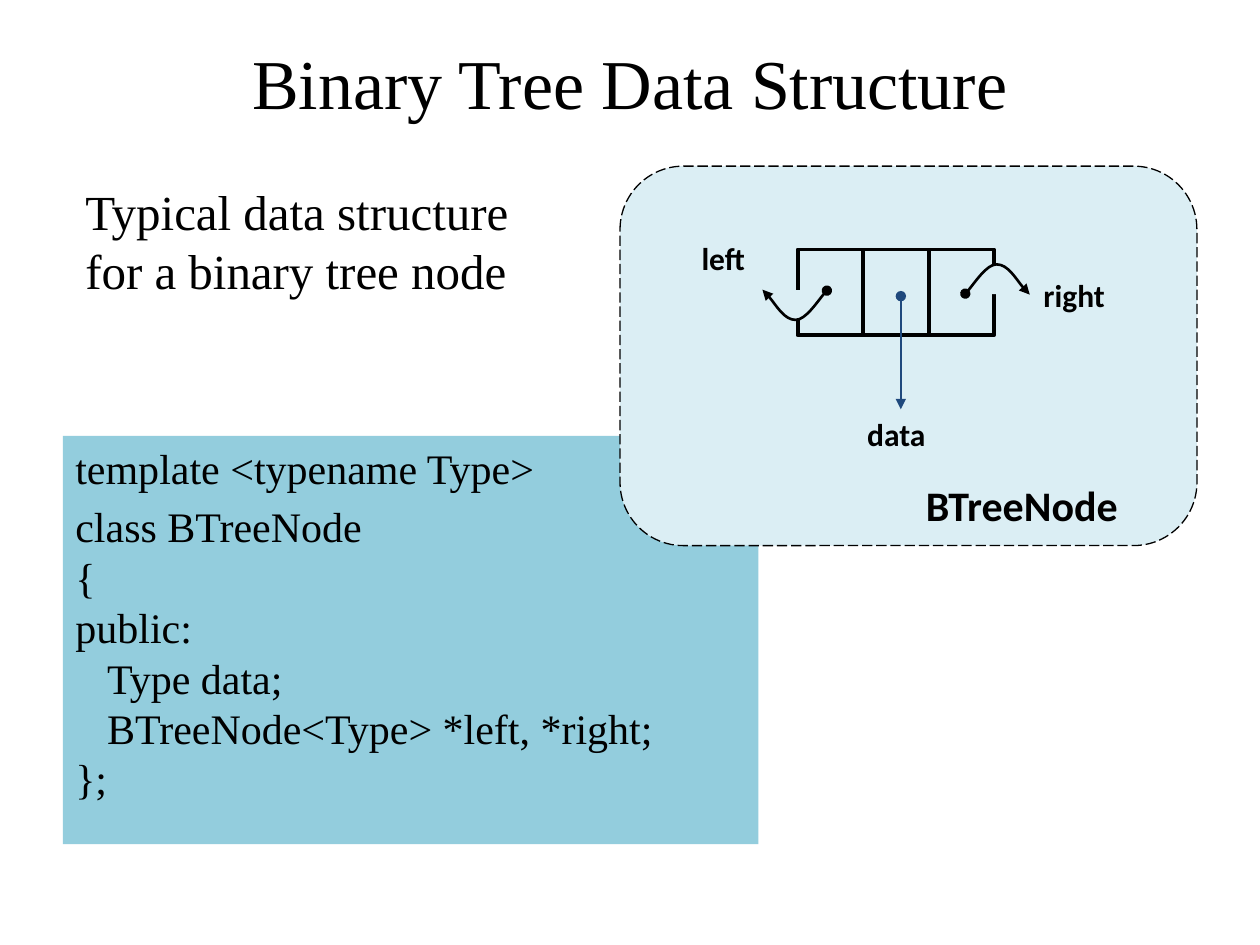
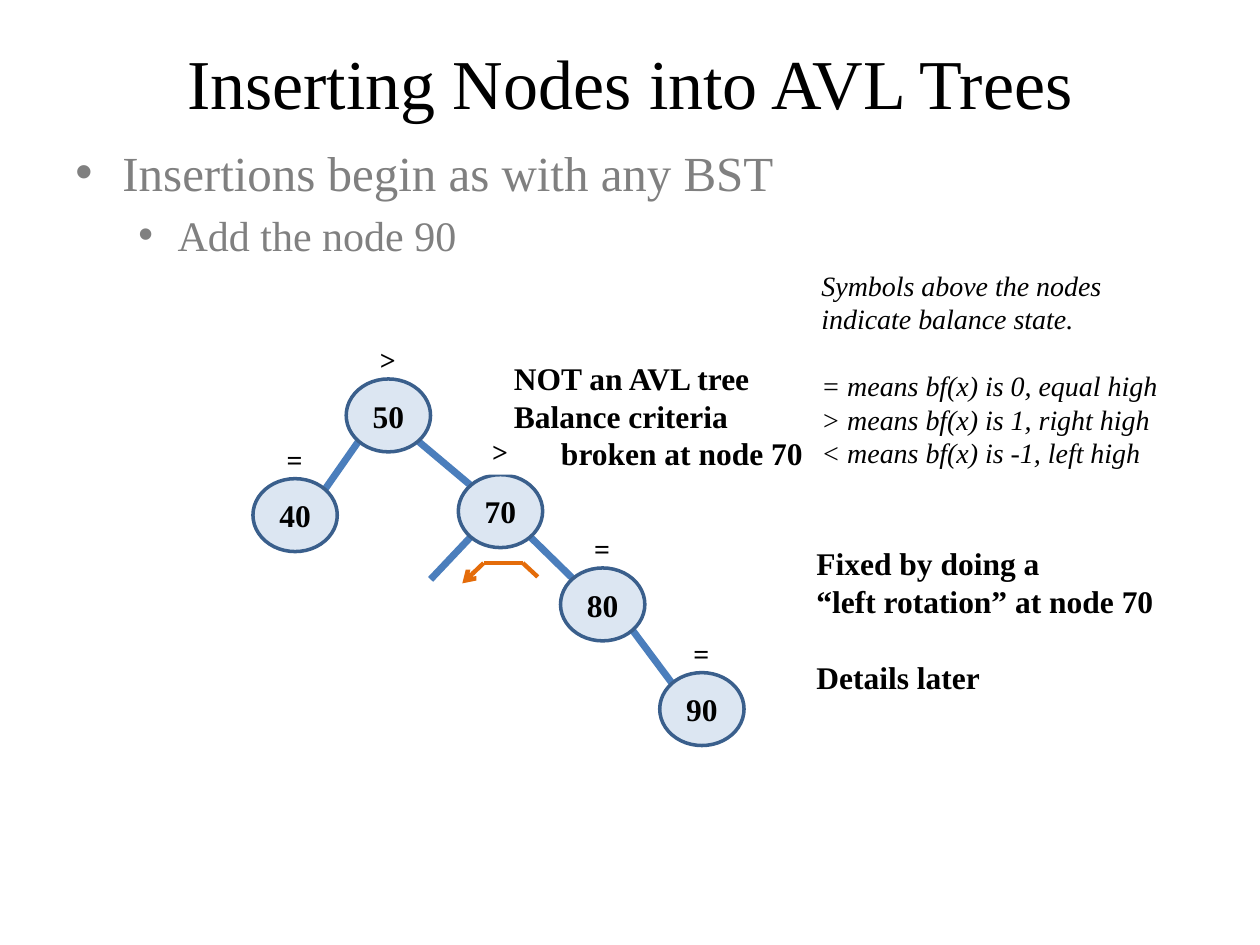
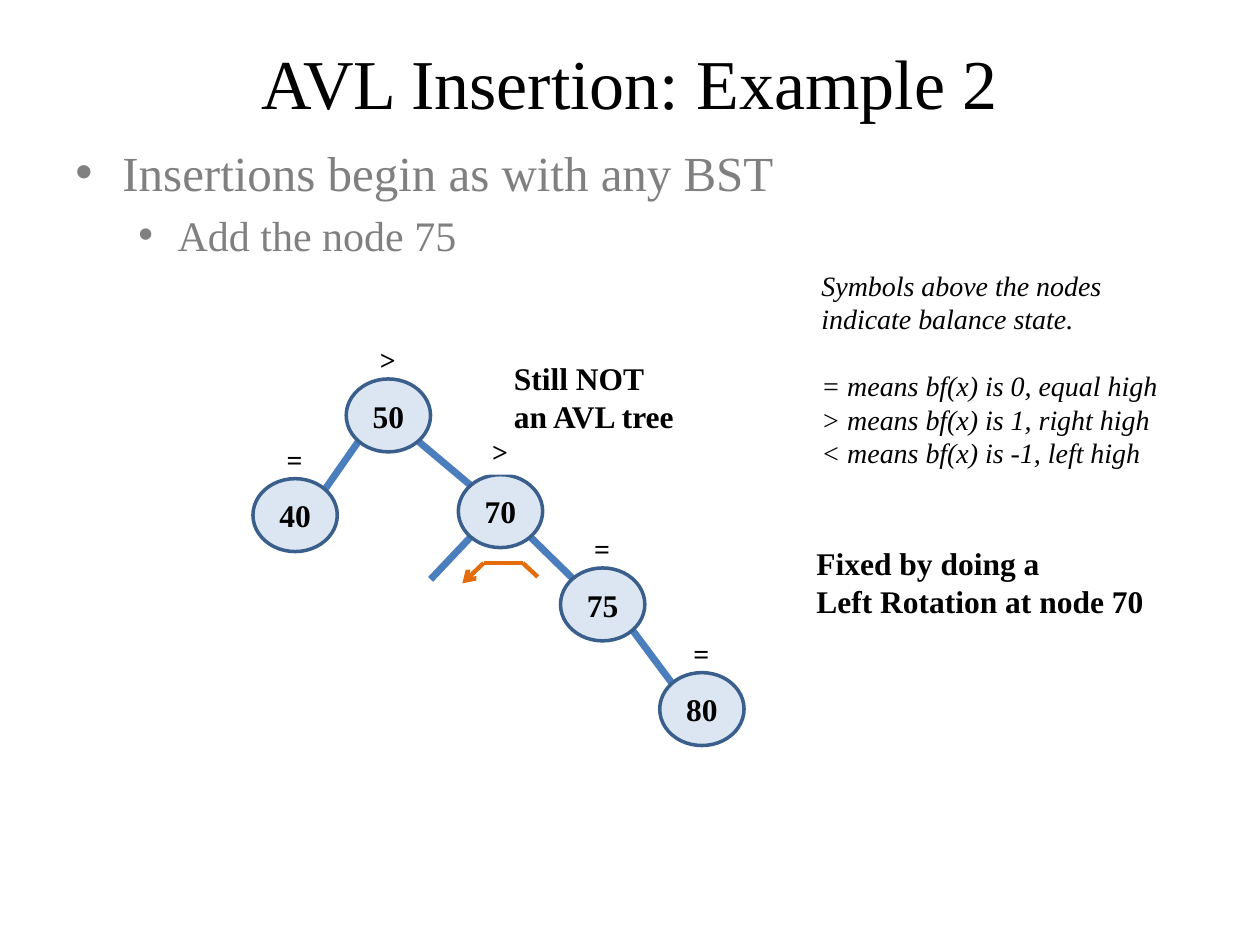
from dataclasses import dataclass
from itertools import pairwise

from lxml.etree import SubElement
from pptx import Presentation
from pptx.dml.color import RGBColor as RGB
from pptx.enum.dml import MSO_LINE
from pptx.enum.shapes import MSO_CONNECTOR, MSO_SHAPE as SHAPE
from pptx.enum.text import MSO_ANCHOR as ANCHOR, MSO_AUTO_SIZE, PP_ALIGN as ALIGN
from pptx.oxml.ns import qn
from pptx.util import Cm, Pt


@dataclass(frozen=True)
class Theme:
    serif: str = "Times New Roman"
    sans: str = "Calibri"
    ink: str = "000000"
    paper: str = "FFFFFF"
    muted: str = "808080"
    code: str = "93CDDD"
    panel: str = "DBEEF4"
    pointer: str = "1F497D"
    node: str = "DCE6F2"
    node_line: str = "3A5F8C"
    edge: str = "4B7EBC"
    rotation: str = "E46C0A"
    title_size: int = 40
    head_size: int = 28
    sub_size: int = 24
    note_size: int = 18
    small_size: int = 16


T = Theme()
LINE_HEIGHT = 1.2
BODY_GAP = 0.2

TITLE_BOX = (1.27, 0.76, 22.86, 1.78)
BULLET_BOX = (1.27, 2.74, 22.86, 3.18)

NODE_W, NODE_H = 1.7, 1.47
DIAGONAL = 0.146  # inset of an ellipse's diagonal point, as a share of its size

# Position in the tree box, balance symbol and its height above the node
NODES = {
    "root": (1.88, 0.86, ">", 0.86),
    "left": (0, 2.87, "=", 0.86),
    "inner": (6.2, 4.67, "=", 0.86),
    "leaf": (8.2, 6.78, "=", 0.86),
    "pivot": (4.14, 2.79, ">", 0.94),
}
EDGES = [("root", "left"), ("root", "pivot"), ("pivot", "inner"), ("inner", "leaf")]

LEGEND = [
    "Symbols above the nodes",
    "indicate balance state.",
    ("= means bf(x) is 0, equal high", {"gap": LINE_HEIGHT}),
    "> means bf(x) is 1, right high",
    "< means bf(x) is -1, left high",
]


def cm(*values):
    return [Cm(v) for v in values]


def style_line(sp, color, width, head=None, tail=None):
    sp.line.color.rgb = RGB.from_string(color)
    sp.line.width = Pt(width)
    ln = sp.element.spPr.find(qn("a:ln"))
    for tag, kind in (("a:headEnd", head), ("a:tailEnd", tail)):
        if kind:
            SubElement(ln, qn(tag), type=kind)


def add_shape(slide, kind, box, fill, line=None, width=1):
    sp = slide.shapes.add_shape(kind, *cm(*box))
    sp.shadow.inherit = False
    sp.fill.solid()
    sp.fill.fore_color.rgb = RGB.from_string(fill)
    if line:
        style_line(sp, line, width)
    else:
        sp.line.fill.background()
    return sp


def add_line(slide, start, end, color, width, **ends):
    cxn = slide.shapes.add_connector(MSO_CONNECTOR.STRAIGHT, *cm(*start, *end))
    style_line(cxn, color, width, **ends)
    SubElement(cxn.element.spPr, qn("a:effectLst"))


def write(sp, lines, size=T.note_size, font=T.serif, color=T.ink, bold=False,
          italic=False, align=ALIGN.LEFT, anchor=ANCHOR.TOP, wrap=True):
    """Fill a shape; a line is text, or text with gap, indent, hang, size, level."""
    tf = sp.text_frame
    tf.word_wrap = wrap
    tf.auto_size = MSO_AUTO_SIZE.NONE if wrap else MSO_AUTO_SIZE.SHAPE_TO_FIT_TEXT
    tf.vertical_anchor = anchor
    for i, line in enumerate(lines):
        text, opts = (line, {}) if isinstance(line, str) else line
        p = tf.add_paragraph() if i else tf.paragraphs[0]
        p.alignment = align
        p.level = opts.get("level", 0)
        pts = opts.get("size", size)
        p.space_before = Pt(opts.get("gap", 0) * pts)
        pPr = p._p.get_or_add_pPr()
        if "indent" in opts:
            pPr.set("marL", str(Cm(opts["indent"])))
        if "hang" in opts:
            pPr.set("indent", str(-Cm(opts["hang"])))
            SubElement(pPr, qn("a:buFont"), typeface="Arial")
            SubElement(pPr, qn("a:buChar"), char="•")
        r = p.add_run()
        r.text = text
        r.font.name, r.font.size = font, Pt(pts)
        r.font.bold, r.font.italic = bold, italic
        r.font.color.rgb = RGB.from_string(color)


def add_text(slide, box, lines, fill=None, **fmt):
    sp = slide.shapes.add_textbox(*cm(*box))
    if fill:
        sp.fill.solid()
        sp.fill.fore_color.rgb = RGB.from_string(fill)
    write(sp, lines, **fmt)


def add_titled_slide(prs, title):
    slide = prs.slides.add_slide(prs.slide_layouts[6])
    add_text(slide, TITLE_BOX, [title], size=T.title_size,
             align=ALIGN.CENTER, anchor=ANCHOR.MIDDLE)
    return slide


def add_pointer_curve(slide, x, y, turn):
    """Draw a curved pointer from (x, y); turn -1 rotates it by half a circle."""
    steps = [(0.1, -0.09), (0.43, -0.59), (0.63, -0.59),
             (0.86, -0.59), (1.14, -0.11), (1.3, 0.02)]
    points = [cm(x + turn * dx, y + turn * dy) for dx, dy in steps]
    builder = slide.shapes.build_freeform(Cm(x), Cm(y))
    builder.add_line_segments(points, close=False)
    sp = builder.convert_to_shape()
    sp.shadow.inherit = False
    sp.fill.solid()
    sp.fill.fore_color.rgb = RGB.from_string(T.panel)
    style_line(sp, T.ink, 1.5, head="oval", tail="triangle")
    # Every three points become one cubic curve
    outline = next(sp.element.iter(qn("a:path")))
    segments = outline.findall(qn("a:lnTo"))
    for i in range(0, len(segments), 3):
        curve = SubElement(outline, qn("a:cubicBezTo"))
        for segment in segments[i:i + 3]:
            curve.append(segment[0])
            outline.remove(segment)


def add_code(slide, box):
    sp = add_shape(slide, SHAPE.RECTANGLE, box, T.code)
    write(sp, [
        ("template <typename Type>", {"gap": BODY_GAP}),
        ("class BTreeNode", {"gap": BODY_GAP}),
        "{",
        "public:",
        ("Type data;", {"indent": 0.64}),
        ("BTreeNode<Type> *left, *right;", {"indent": 0.64}),
        "};",
    ], size=T.sub_size)


def add_node_diagram(slide, box):
    x, y = box[:2]
    panel = add_shape(slide, SHAPE.ROUNDED_RECTANGLE, box, T.panel, T.ink, 0.75)
    panel.line.dash_style = MSO_LINE.LONG_DASH
    cell_w, cell_h = 1.32, 1.73
    for i in range(3):
        cell = (x + 3.58 + i * cell_w, y + 1.68, cell_w, cell_h)
        add_shape(slide, SHAPE.RECTANGLE, cell, T.panel, T.ink, 2.25)
    add_pointer_curve(slide, x + 6.96, y + 2.57, 1)
    add_pointer_curve(slide, x + 4.17, y + 2.51, -1)
    labels = [
        ("right", 8.28, 2.08, 1.75, 1.02, T.note_size),
        ("data", 4.72, 4.9, 1.7, 1.02, T.note_size),
        ("BTreeNode", 5.89, 6.2, 4.42, 1.27, T.sub_size),
        ("left", 1.37, 1.35, 1.42, 1.02, T.note_size),
    ]
    for text, dx, dy, w, h, size in labels:
        add_text(slide, (x + dx, y + dy, w, h), [text], fill=T.panel, size=size,
                 font=T.sans, bold=True, align=ALIGN.CENTER, wrap=False)
    add_line(slide, (x + 5.66, y + 2.62), (x + 5.66, y + 4.9), T.pointer, 1.5,
             head="oval", tail="triangle")


def diagonal_point(name, right, bottom):
    x, y = NODES[name][:2]
    return (x + NODE_W * (1 - DIAGONAL if right else DIAGONAL),
            y + NODE_H * (1 - DIAGONAL if bottom else DIAGONAL))


def add_tree(slide, box, keys):
    left, top = box

    def place(point):
        return left + point[0], top + point[1]

    for parent, child in EDGES:
        to_right = NODES[child][0] > NODES[parent][0]
        add_line(slide, place(diagonal_point(parent, to_right, True)),
                 place(diagonal_point(child, not to_right, False)), T.edge, 4)
    add_line(slide, place(diagonal_point("pivot", False, True)),
             place((3.58, 4.9)), T.edge, 4)

    bends = [(5.74, 4.85), (5.44, 4.57), (4.65, 4.57), (4.22, 4.98)]
    for start, end in pairwise(bends):
        add_line(slide, place(start), place(end), T.rotation, 2.5,
                 tail="arrow" if end == bends[-1] else None)

    for name, (dx, dy, symbol, lift) in NODES.items():
        x, y = place((dx, dy))
        sp = add_shape(slide, SHAPE.OVAL, (x, y, NODE_W, NODE_H),
                       T.node, T.node_line, 2)
        write(sp, [keys[name]], bold=True, align=ALIGN.CENTER, anchor=ANCHOR.MIDDLE)
        add_text(slide, (x + 0.43, y - lift, 0.84, 0.94), [symbol],
                 fill=T.paper if name == "pivot" else None,
                 size=T.small_size, bold=True, wrap=False)


def add_bullets(slide, box, lines):
    head, sub = lines
    add_text(slide, box, [
        (head, {"gap": BODY_GAP, "indent": 0.95, "hang": 0.95}),
        (sub, {"gap": BODY_GAP, "indent": 2.06, "hang": 0.79,
               "size": T.sub_size, "level": 1}),
    ], size=T.head_size, color=T.muted)


def build_structure_slide(prs):
    slide = add_titled_slide(prs, "Binary Tree Data Structure")
    add_code(slide, (1.27, 8.79, 14.02, 8.23))
    add_node_diagram(slide, (12.5, 3.35, 11.63, 7.65))
    add_text(slide, (1.47, 3.53, 9.12, 2.64),
             ["Typical data structure", "for a binary tree node"],
             size=T.head_size, wrap=False)


def build_insertion_slide(prs, title, new_key, keys, status, status_size, fix, fix_size):
    slide = add_titled_slide(prs, title)
    add_bullets(slide, BULLET_BOX,
                ["Insertions begin as with any BST", f"Add the node {new_key}"])
    add_text(slide, (16.31, 5.28, 7.39, 4.37), LEGEND,
             size=T.small_size, italic=True, wrap=False)
    add_tree(slide, (5.1, 6.78), dict(zip(NODES, keys)))
    add_text(slide, (10.11, 7.11, *status_size), status, bold=True, wrap=False)
    add_text(slide, (16.21, 10.85, *fix_size), fix, bold=True, wrap=False)


def main():
    prs = Presentation()
    prs.slide_width, prs.slide_height = cm(25.4, 19.05)
    build_structure_slide(prs)
    build_insertion_slide(
        prs, "Inserting Nodes into AVL Trees", 90, ["50", "40", "80", "90", "70"],
        ["NOT an AVL tree", "Balance criteria",
         ("broken at node 70", {"indent": 0.95})], (6.4, 2.57),
        ["Fixed by doing a", "“left rotation” at node 70",
         ("Details later", {"gap": LINE_HEIGHT})], (7.37, 3.33))
    build_insertion_slide(
        prs, "AVL Insertion: Example 2", 75, ["50", "40", "75", "80", "70"],
        ["Still NOT", "an AVL tree"], (3.76, 1.8),
        ["Fixed by doing a", "Left Rotation at node 70"], (7.16, 1.8))
    prs.save("out.pptx")


if __name__ == "__main__":
    main()
